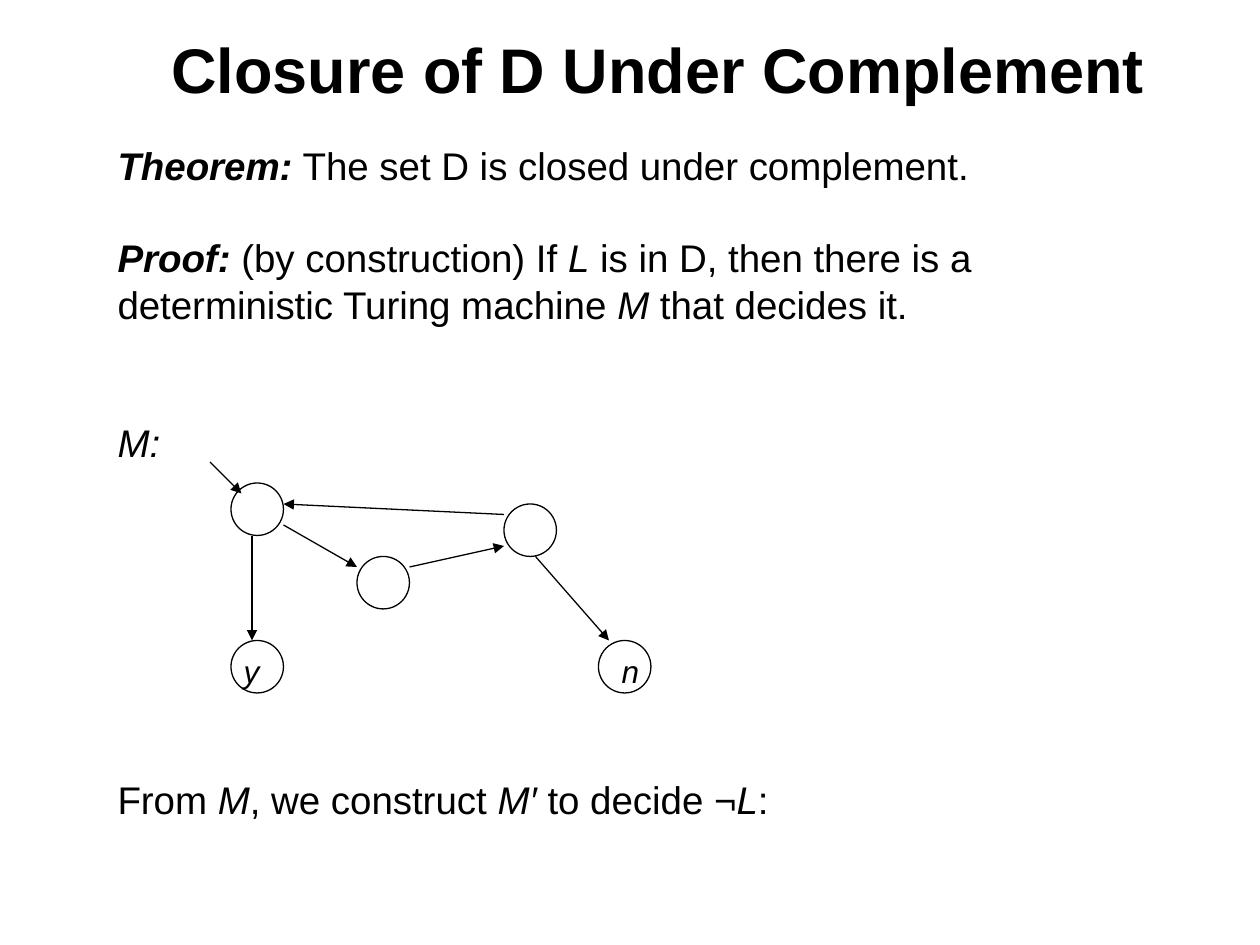
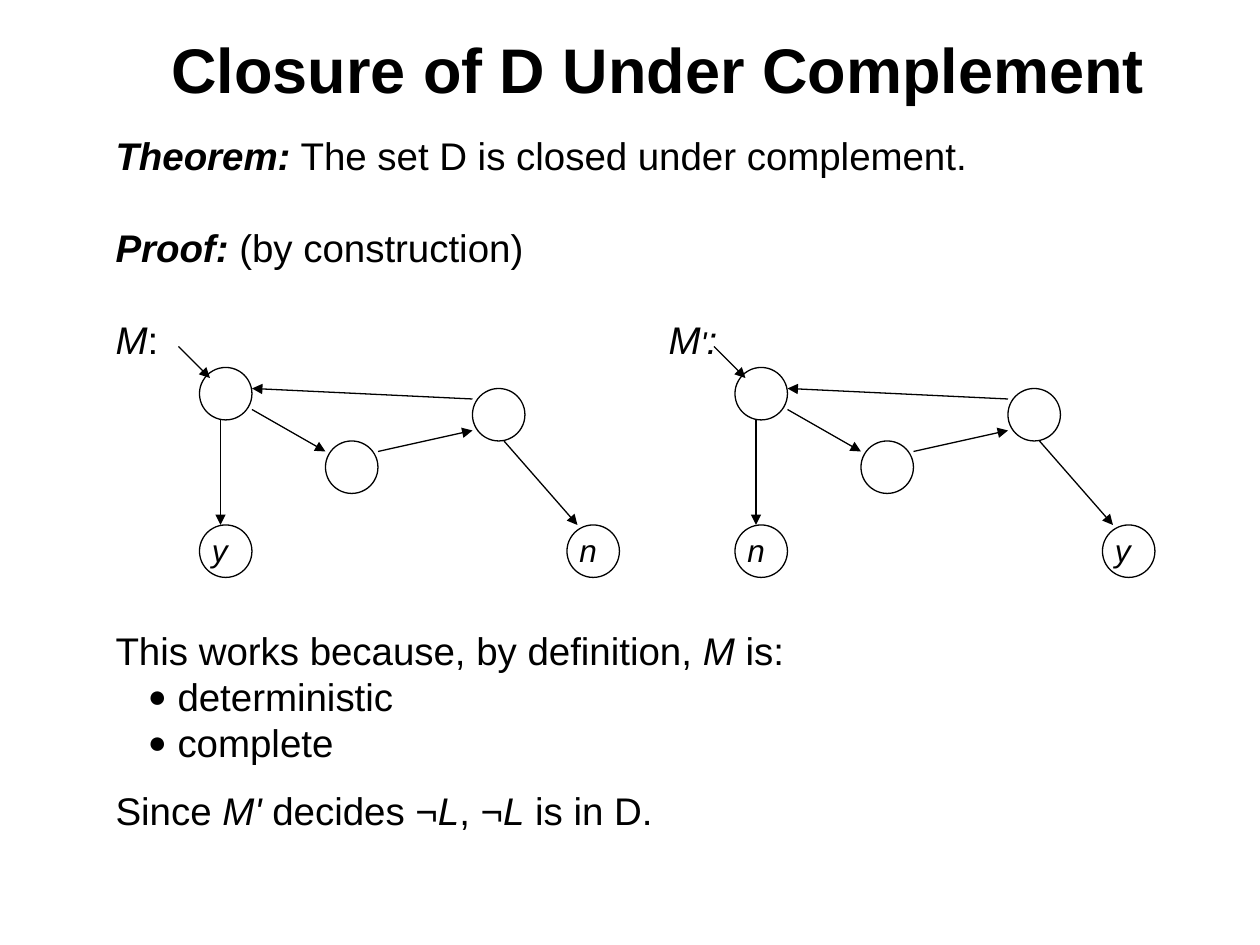
"""Build two slides on the closure of D under complement."""
from typing import NamedTuple

from lxml import etree
from pptx import Presentation
from pptx.dml.color import RGBColor
from pptx.enum.shapes import MSO_CONNECTOR, MSO_SHAPE
from pptx.enum.text import MSO_ANCHOR, MSO_AUTO_SIZE, PP_ALIGN
from pptx.oxml.ns import qn
from pptx.util import Cm, Pt

LINE = MSO_CONNECTOR.STRAIGHT
OVAL = MSO_SHAPE.OVAL
MIDDLE = MSO_ANCHOR.MIDDLE
FIXED = MSO_AUTO_SIZE.NONE
CENTER = PP_ALIGN.CENTER

BLACK = RGBColor(0, 0, 0)
FONT = "Arial"
TITLE = "Closure of D Under Complement "
TITLE_SIZE, BODY_SIZE, STATE_SIZE = 36, 22, 18
PITCH = 26.3
STROKE = Pt(0.75)
UNIT = Cm(2.54) // 12
NODE = 5


class Run(NamedTuple):
    """A stretch of text in one style."""
    text: str
    italic: bool = False
    bold: bool = False
    size: float = BODY_SIZE


class Para(NamedTuple):
    """A paragraph with the gap above it in points."""
    runs: list[Run]
    gap: float = 0
    tabs: tuple[float, ...] = ()
    bullet: bool = False


class Spot(NamedTuple):
    """A place on the grid."""
    x: int
    y: int


class Arrow(NamedTuple):
    """An arrow between two grid places."""
    tail: Spot
    head: Spot


class Machine(NamedTuple):
    """A state diagram with the labels of its two halting states."""
    at: Spot
    labels: str = ""


HALTS = [Spot(2, 17), Spot(37, 17)]
NODES = HALTS + [Spot(14, 9), Spot(2, 2), Spot(28, 4)]
ARROWS = [
    Arrow(Spot(0, 0), Spot(3, 3)),
    Arrow(Spot(4, 7), Spot(4, 17)),
    Arrow(Spot(7, 6), Spot(14, 10)),
    Arrow(Spot(19, 10), Spot(28, 8)),
    Arrow(Spot(31, 9), Spot(38, 17)),
    Arrow(Spot(28, 5), Spot(7, 4)),
]

THEOREM = Para([Run("Theorem:", True, True),
                Run(" The set D is closed under complement.")])
PROOF = Run("Proof:", True, True)

GIVEN = [
    THEOREM,
    Para([PROOF, Run(" (by construction) If "), Run("L", True),
          Run(" is in D, then there is a deterministic Turing machine "),
          Run("M", True), Run(" that decides it.")], PITCH),
    Para([Run("M:", True)], 2 * PITCH),
    Para([Run("\ty\tn", True, size=STATE_SIZE)], 102, (2.54, 10.16)),
    Para([Run("From "), Run("M", True), Run(", we construct "),
          Run("M′", True), Run(" to decide ¬"), Run("L", True), Run(":")], 49.5),
]
RESULT = [
    THEOREM,
    Para([PROOF, Run(" (by construction)")], PITCH),
    Para([Run("M", True), Run(":\t"), Run("M", True),
          Run("'", True, size=STATE_SIZE), Run(":", True)], PITCH, (11.15,)),
    Para([Run("This works because, by definition, "), Run("M", True),
          Run(" is:")], 151.4),
    Para([Run("deterministic")], bullet=True),
    Para([Run("complete")], bullet=True),
    Para([Run("Since "), Run("M'", True), Run(" decides ¬"), Run("L", True),
          Run(", ¬"), Run("L", True), Run(" is in D.")], 12.6),
]


def add_run(para, run: Run) -> None:
    """Append one styled run to a paragraph."""
    piece = para.add_run()
    piece.text = run.text
    font = piece.font
    font.name, font.size = FONT, Pt(run.size)
    font.bold, font.italic = run.bold, run.italic
    font.color.rgb = BLACK


def add_title(slide) -> None:
    """Place and style the title."""
    title = slide.shapes.title
    title.left, title.top = Cm(1.48), Cm(0.21)
    title.width, title.height = Cm(23.92), Cm(2.33)
    frame = title.text_frame
    frame.word_wrap, frame.auto_size = True, FIXED
    frame.vertical_anchor = MIDDLE
    para = frame.paragraphs[0]
    para.alignment = CENTER
    add_run(para, Run(TITLE, bold=True, size=TITLE_SIZE))


def set_marks(para, item: Para) -> None:
    """Add the bullet or the tab stops of a paragraph."""
    props = para._p.get_or_add_pPr()
    if item.bullet:
        props.set("marL", str(Cm(1.25)))
        props.set("indent", str(-Cm(0.6)))
        etree.SubElement(props, qn("a:buSzPct"), val="82000")
        etree.SubElement(props, qn("a:buFont"), typeface=FONT)
        etree.SubElement(props, qn("a:buChar"), char="●")
    if item.tabs:
        stops = etree.SubElement(props, qn("a:tabLst"))
        for stop in item.tabs:
            etree.SubElement(stops, qn("a:tab"), pos=str(Cm(stop)), algn="l")


def add_body(slide, left: float, top: float, high: float,
             items: list[Para]) -> None:
    """Write the text of a slide."""
    box = slide.shapes.add_textbox(Cm(left), Cm(top), Cm(22.05), Cm(high))
    frame = box.text_frame
    frame.word_wrap = True
    for num, item in enumerate(items):
        para = frame.add_paragraph() if num else frame.paragraphs[0]
        set_marks(para, item)
        para.line_spacing = Pt(PITCH)
        if item.gap:
            para.space_before = Pt(item.gap)
        for run in item.runs:
            add_run(para, run)


def place(base: Spot, spot: Spot) -> tuple[int, int]:
    """Turn a grid place into slide lengths."""
    return (base.x + spot.x) * UNIT, (base.y + spot.y) * UNIT


def add_node(slide, base: Spot, spot: Spot) -> None:
    """Draw the circle of one state."""
    node = slide.shapes.add_shape(OVAL, *place(base, spot),
                                  NODE * UNIT, NODE * UNIT)
    node.shadow.inherit = False
    node.fill.background()
    node.line.color.rgb, node.line.width = BLACK, STROKE


def add_arrow(slide, base: Spot, arrow: Arrow) -> None:
    """Draw one arrow."""
    link = slide.shapes.add_connector(LINE, *place(base, arrow.tail),
                                      *place(base, arrow.head))
    link.line.color.rgb, link.line.width = BLACK, STROKE
    etree.SubElement(link.line._get_or_add_ln(), qn("a:tailEnd"),
                     type="triangle")
    etree.SubElement(link._element.spPr, qn("a:effectLst"))


def add_label(slide, base: Spot, spot: Spot, text: str) -> None:
    """Name one halting state."""
    box = slide.shapes.add_textbox(*place(base, spot), NODE * UNIT, Cm(1.02))
    box.text_frame.word_wrap = True
    add_run(box.text_frame.paragraphs[0], Run(text, True, size=STATE_SIZE))


def add_machine(slide, machine: Machine) -> None:
    """Draw a whole state diagram."""
    for spot in NODES:
        add_node(slide, machine.at, spot)
    for arrow in ARROWS:
        add_arrow(slide, machine.at, arrow)
    for spot, text in zip(HALTS, machine.labels):
        add_label(slide, machine.at, spot, text)


def add_slide(deck, left: float, top: float, high: float,
              items: list[Para], machines: list[Machine]) -> None:
    """Add a slide with its title, text and diagrams."""
    slide = deck.slides.add_slide(deck.slide_layouts[5])
    add_title(slide)
    add_body(slide, left, top, high, items)
    for machine in machines:
        add_machine(slide, machine)


def main() -> None:
    """Build and save the deck."""
    deck = Presentation()
    deck.slide_width, deck.slide_height = Cm(25.4), Cm(19.05)
    add_slide(deck, 2.12, 2.75, 13.97, GIVEN, [Machine(Spot(20, 44))])
    add_slide(deck, 2.08, 2.54, 14.38, RESULT,
              [Machine(Spot(17, 33), "yn"), Machine(Spot(68, 33), "ny")])
    deck.save("out.pptx")


if __name__ == "__main__":
    main()
